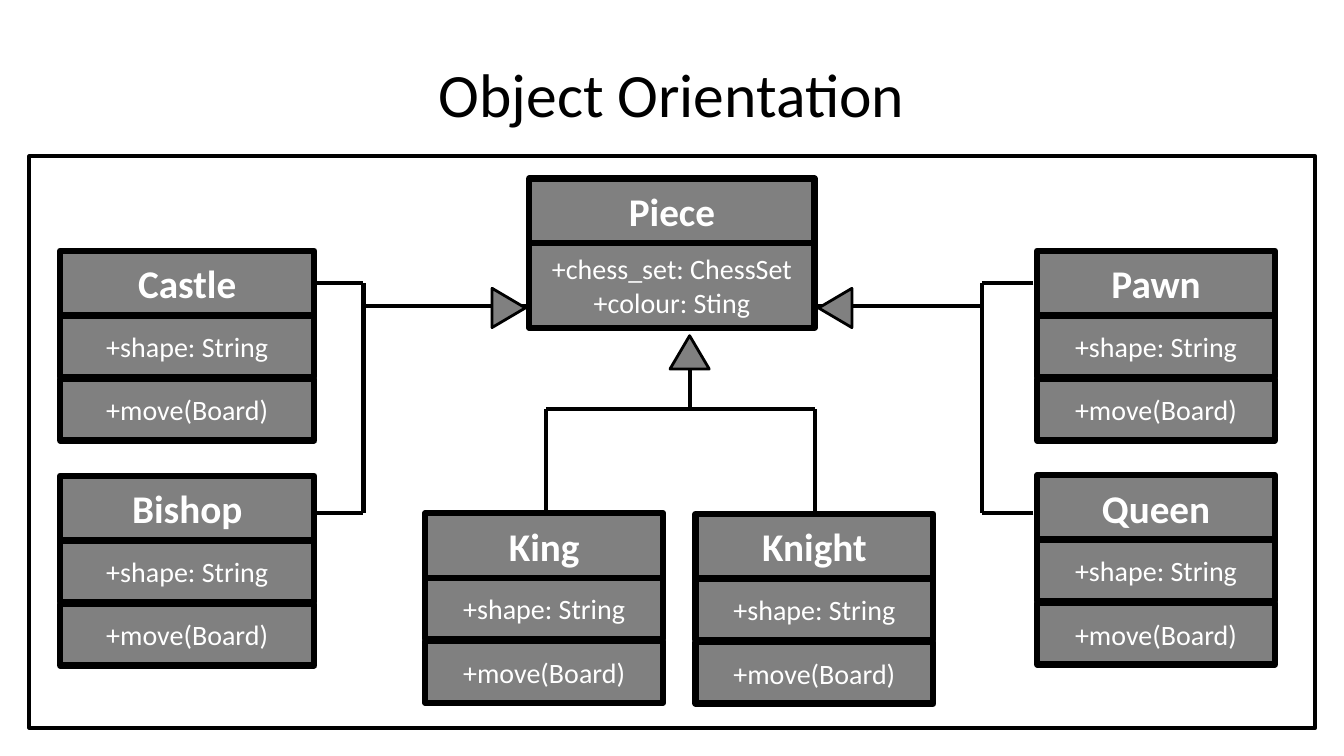
from pptx import Presentation
from pptx.dml.color import RGBColor
from pptx.enum.shapes import MSO_CONNECTOR, MSO_SHAPE
from pptx.enum.text import MSO_ANCHOR, PP_ALIGN
from pptx.oxml.xmlchemy import OxmlElement
from pptx.util import Cm, Pt

BLACK = RGBColor(0x00, 0x00, 0x00)
GREY = RGBColor(0x80, 0x80, 0x80)
WHITE = RGBColor(0xFF, 0xFF, 0xFF)
FONT = "Calibri"
NAME_HEIGHT = 1.63
MEMBER_HEIGHT = 1.55
MEMBER_STEP = 1.6
ARROW_WIDTH, ARROW_HEIGHT = 0.99, 0.84


def write_text(box, text, size, colour, bold=False):
    frame = box.text_frame
    frame.word_wrap = True
    frame.vertical_anchor = MSO_ANCHOR.MIDDLE
    frame.text = text
    for para in frame.paragraphs:
        para.alignment = PP_ALIGN.CENTER
        for span in para.runs:
            span.font.name = FONT
            span.font.size = Pt(size)
            span.font.bold = bold
            span.font.color.rgb = colour


def add_outlined(page, kind, left, top, width, height, line_width, fill=GREY):
    shape = page.shapes.add_shape(kind, Cm(left), Cm(top), Cm(width), Cm(height))
    shape.shadow.inherit = False
    if fill is None:
        shape.fill.background()
    else:
        shape.fill.solid()
        shape.fill.fore_color.rgb = fill
    shape.line.color.rgb = BLACK
    shape.line.width = Pt(line_width)
    return shape


def add_line(page, start_x, start_y, end_x, end_y):
    line = page.shapes.add_connector(
        MSO_CONNECTOR.STRAIGHT, Cm(start_x), Cm(start_y), Cm(end_x), Cm(end_y))
    line.line.color.rgb = BLACK
    line.line.width = Pt(3)
    line._element.spPr.append(OxmlElement("a:effectLst"))


def add_arrowhead(page, centre_x, centre_y, rotation):
    head = add_outlined(
        page, MSO_SHAPE.ISOSCELES_TRIANGLE, centre_x - ARROW_WIDTH / 2,
        centre_y - ARROW_HEIGHT / 2, ARROW_WIDTH, ARROW_HEIGHT, 2)
    head.rotation = rotation


def add_title(page, left, top, width, height):
    box = page.shapes.add_textbox(Cm(left), Cm(top), Cm(width), Cm(height))
    write_text(box, "Object Orientation", 44, BLACK)


def add_class(page, left, top, width, name, members, member_height=MEMBER_HEIGHT):
    box = add_outlined(page, MSO_SHAPE.RECTANGLE, left, top, width, NAME_HEIGHT, 4.5)
    write_text(box, name, 28, WHITE, bold=True)
    for row, member in enumerate(members):
        member_top = top + NAME_HEIGHT + row * MEMBER_STEP
        box = add_outlined(
            page, MSO_SHAPE.RECTANGLE, left, member_top, width, member_height, 4.5)
        write_text(box, member, 20, WHITE)


def add_side_branch(page, class_edge, spine, piece_edge, top, height, rotation):
    direction = 1 if piece_edge > spine else -1
    arm = top + 0.58
    for stub in (top, top + height):
        add_line(page, class_edge, stub, spine, stub)
    add_line(page, spine, top, spine, top + height)
    add_line(page, spine, arm, piece_edge, arm)
    add_arrowhead(page, piece_edge - direction * 0.52, arm + 0.04, rotation)


def add_lower_branch(page, left, top, width, height):
    stem = left + 3.62
    bus = top + 1.85
    add_line(page, left, bus, left + width, bus)
    for drop in (left, left + width):
        add_line(page, drop, bus, drop, top + height)
    add_line(page, stem, top + 0.18, stem, bus)
    add_arrowhead(page, stem, top + ARROW_HEIGHT / 2, 0)


def add_class_diagram(page, left, top, width, height):
    add_outlined(page, MSO_SHAPE.RECTANGLE, left, top, width, height, 3, fill=None)
    add_class(page, left + 12.6, top + 0.56, 7.19, "Piece",
              ["+chess_set: ChessSet\n+colour: Sting"], member_height=2.13)
    pieces = [
        ("Pawn", 25.4, 2.38, 5.99),
        ("Queen", 25.4, 8.03, 5.99),
        ("Castle", 0.78, 2.38, 6.4),
        ("Bishop", 0.78, 8.05, 6.4),
        ("Knight", 16.79, 9.01, 5.99),
        ("King", 9.98, 8.99, 5.99),
    ]
    for name, across, down, class_width in pieces:
        add_class(page, left + across, top + down, class_width, name,
                  ["+shape: String", "+move(Board)"])
    add_lower_branch(page, left + 13.02, top + 4.52, 6.78, 4.49)
    add_side_branch(page, left + 7.18, left + 8.42, left + 12.6, top + 3.2, 5.79, 90)
    add_side_branch(page, left + 25.3, left + 24, left + 19.79, top + 3.2, 5.79, 270)


def main():
    deck = Presentation()
    deck.slide_width = Cm(33.87)
    deck.slide_height = Cm(19.05)
    page = deck.slides.add_slide(deck.slide_layouts[6])
    add_title(page, 1.69, 0.76, 30.48, 3.18)
    add_class_diagram(page, 0.74, 3.94, 32.41, 14.4)
    deck.save("out.pptx")


if __name__ == "__main__":
    main()
